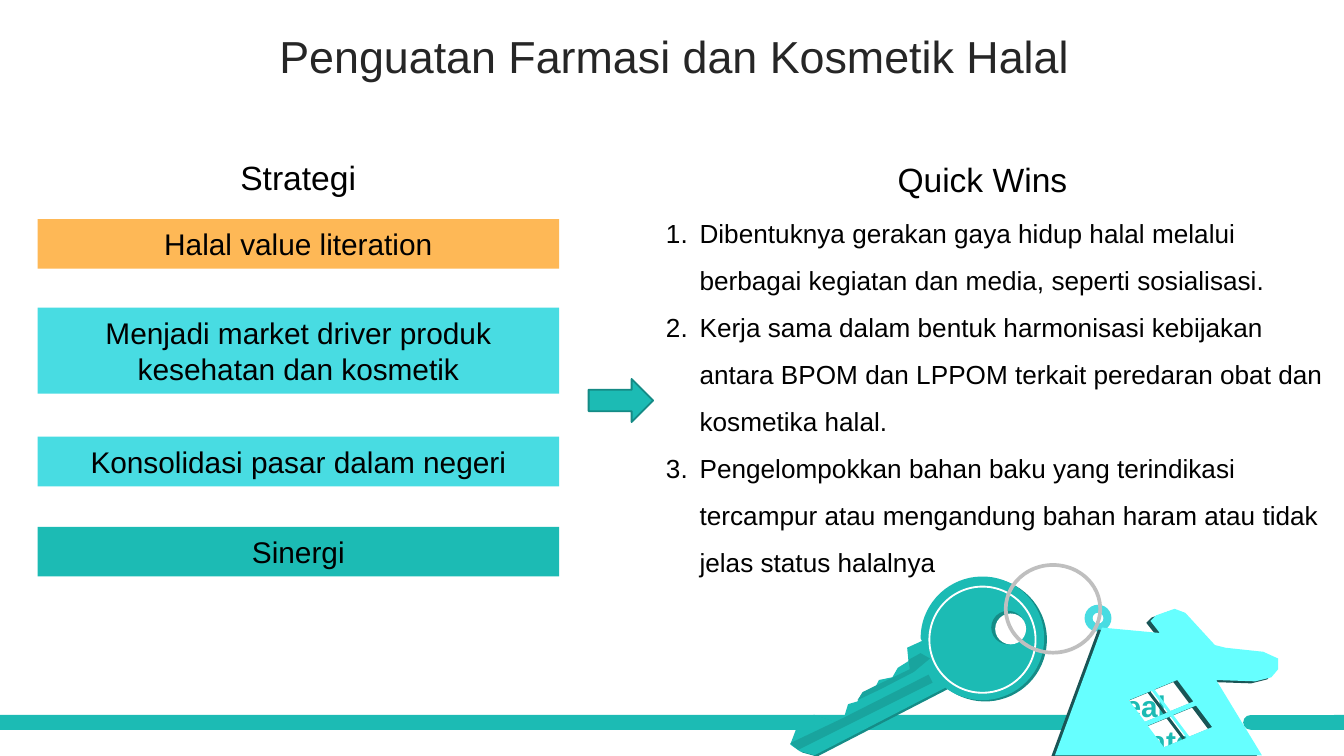
from math import cos, pi, sin

from lxml.etree import SubElement
from pptx import Presentation
from pptx.dml.color import RGBColor
from pptx.enum.shapes import MSO_SHAPE
from pptx.enum.text import MSO_ANCHOR, MSO_AUTO_SIZE, PP_ALIGN
from pptx.oxml.ns import qn
from pptx.util import Inches, Pt

WIDTH = Inches(10)
HEIGHT = WIDTH * 9 // 16
CELL = WIDTH / 100
COLORS = {
    "teal": "1CBBB4", "aqua": "48DCE2", "orange": "FEB856", "dark": "158C87",
    "groove": "19A49E", "house": "66FFFF", "edge": "1A5556", "ring": "BFBFBF",
    "white": "FFFFFF", "black": "000000", "title": "262626", "outline": "158A85",
}
STRATEGIES = [
    ("Halal value literation", "orange", 16.3, 3.7),
    ("Menjadi market driver produk kesehatan dan kosmetik", "aqua", 22.9, 6.4),
    ("Konsolidasi pasar dalam negeri", "aqua", 32.5, 3.7),
    ("Sinergi", "teal", 39.2, 3.7),
]
QUICK_WINS = [
    "Dibentuknya gerakan gaya hidup halal melalui berbagai kegiatan dan media, seperti sosialisasi.",
    "Kerja sama dalam bentuk harmonisasi kebijakan antara BPOM dan LPPOM terkait peredaran obat dan kosmetika halal.",
    "Pengelompokkan bahan baku yang terindikasi tercampur atau mengandung bahan haram atau tidak jelas status halalnya",
]
KEY_BLADE = [
    (70.3, 51.2), (60.6, 56.2), (59.5, 55.9), (58.8, 55.4), (59.6, 53.3),
    (60.6, 53.2), (62.1, 53.7), (62.8, 53.4), (63.1, 52.4), (63.8, 52.2),
    (64.2, 51.5), (65.1, 51.2), (65.4, 50.6), (66.4, 50.4), (66.8, 49.7),
    (67.6, 49.2), (67.5, 48.2), (68.6, 47.7),
]
KEY_GROOVES = [
    [(58.8, 55.3), (62.8, 53.4), (69.1, 50.2), (69.4, 50.8), (59.4, 55.8)],
    [(63.8, 52.1), (64.2, 51.5), (65.2, 51), (67.7, 49.8), (67.6, 49.1),
     (68.5, 48.6), (69.2, 49), (68, 50), (65.5, 51.3)],
]
HOUSE = [
    (82, 46.7), (86.3, 47.1), (85.6, 46.2), (86, 45.8), (87.4, 45.3),
    (88.2, 45.6), (90.4, 48), (91.2, 48.2), (94, 48.5), (95.1, 49),
    (95.1, 49.8), (94.6, 50.4), (93.4, 50.7), (90.5, 50.6), (93.9, 56.2),
    (78.5, 56.2),
]


def box(left, top, width, height):
    return [round(v * CELL) for v in (left, top, width, height)]


def rgb(name):
    return RGBColor.from_string(COLORS[name])


def paint(sp, fill, line=None):
    sp.shadow.inherit = False
    sp.fill.solid()
    sp.fill.fore_color.rgb = rgb(fill)
    if line:
        sp.line.color.rgb = rgb(line)
        sp.line.width = Pt(1)
    else:
        sp.line.fill.background()
    return sp


def add_shape(s, kind, at, fill, line=None):
    return paint(s.shapes.add_shape(kind, *box(*at)), fill, line)


def add_outline(s, contours, fill, shift=0):
    scaled = [[(round((x + shift) * CELL), round((y + abs(shift) / 2) * CELL)) for x, y in c]
              for c in contours]
    builder = s.shapes.build_freeform(*scaled[0][0])
    builder.add_line_segments(scaled[0][1:])
    for contour in scaled[1:]:
        builder.move_to(*contour[0])
        builder.add_line_segments(contour[1:])
    return paint(builder.convert_to_shape(), fill)


def format_text(p, size, color="black", align=None, bold=False):
    p.alignment = align
    for r in p.runs:
        r.font.name = "Arial"
        r.font.size = Pt(size)
        r.font.bold = bold
        r.font.color.rgb = rgb(color)


def add_label(s, text, at, size, **style):
    tf = s.shapes.add_textbox(*box(*at)).text_frame
    tf.word_wrap = True
    tf.text = text
    format_text(tf.paragraphs[0], size, **style)
    return tf


def place(sp, at):
    sp.left, sp.top, sp.width, sp.height = box(*at)
    sp.text_frame.auto_size = MSO_AUTO_SIZE.NONE
    return sp.text_frame


def fill_title(s, text):
    tf = place(s.shapes.title, (2.7, 1.45, 94.9, 5.9))
    tf.text = text
    tf.vertical_anchor = MSO_ANCHOR.MIDDLE
    p = tf.paragraphs[0]
    p.line_spacing = 0.9
    format_text(p, 24, "title", PP_ALIGN.CENTER)


def fill_numbered_list(s, items):
    tf = place(s.placeholders[1], (48.55, 14.5, 51.4, 29.3))
    tf.text = "\n".join(items)
    for p in tf.paragraphs:
        p.line_spacing = 1.5
        p.space_before = Pt(0)
        format_text(p, 14, align=PP_ALIGN.LEFT)
        props = p._p.get_or_add_pPr()
        props.set("marL", str(Inches(0.25)))
        props.set("indent", str(-Inches(0.25)))
        SubElement(props, qn("a:buFont"), typeface="+mj-lt")
        SubElement(props, qn("a:buAutoNum"), type="arabicPeriod")


def add_strategies(s):
    for text, color, top, height in STRATEGIES:
        sp = add_shape(s, MSO_SHAPE.RECTANGLE, (2.8, top, 38.8, height), color)
        tf = sp.text_frame
        tf.word_wrap = True
        tf.vertical_anchor = MSO_ANCHOR.MIDDLE
        tf.text = text
        format_text(tf.paragraphs[0], 16, align=PP_ALIGN.CENTER)


def add_footer(s):
    for center, length, rotation in ((40.55, 81.1, 90), (96.25, 7.5, 270)):
        at = (center - 0.55, 53.75 - length / 2, 1.1, length)
        sp = add_shape(s, MSO_SHAPE.ROUND_2_SAME_RECTANGLE, at, "teal")
        sp.adjustments[0] = 0.5
        sp.rotation = rotation
    tf = add_label(s, "Real Estate", (81.1, 50.6, 11.4, 6.4), 16,
                   color="teal", align=PP_ALIGN.JUSTIFY, bold=True)
    tf.vertical_anchor = MSO_ANCHOR.MIDDLE


def add_disc(s, x, y, radius, fill):
    return add_shape(s, MSO_SHAPE.OVAL, (x - radius, y - radius, 2 * radius, 2 * radius), fill)


def add_key(s):
    arc = [(73.1 + 4.6 * cos(a), 47.5 + 4.6 * sin(a))
           for a in (pi * (1.0 + 1.74 * i / 60) for i in range(61))]
    for color, shift in (("dark", 0.2), ("teal", 0)):
        add_outline(s, [KEY_BLADE + arc], color, shift)
    for groove in KEY_GROOVES:
        add_outline(s, [groove], "groove")
    rim = add_disc(s, 73.1, 47.6, 3.95, "teal")
    rim.line.color.rgb = rgb("white")
    rim.line.width = Pt(1)
    add_disc(s, 75, 46.7, 1.25, "dark")
    add_disc(s, 75.2, 46.8, 1.15, "white")


def add_house(s):
    panes = []
    for row in range(2):
        for col in range(2):
            x, y = 84 + 1.9 * col + 1.4 * row, 52.1 - 0.8 * col + 1.9 * row
            panes.append([(x, y), (x + 1.7, y - 0.7), (x + 2.9, y + 0.9), (x + 1.2, y + 1.6)])
    add_disc(s, 81.7, 46, 1, "aqua")
    add_disc(s, 81.7, 46, 0.4, "white")
    ring = add_shape(s, MSO_SHAPE.DONUT, (74.7, 41.9, 7.3, 6.8), "ring")
    ring.adjustments[0] = 0.04
    for color, shift in (("edge", -0.3), ("house", 0)):
        add_outline(s, [HOUSE] + panes, color, shift)


def main():
    prs = Presentation()
    prs.slide_width, prs.slide_height = WIDTH, HEIGHT
    s = prs.slides.add_slide(prs.slide_layouts[1])
    add_footer(s)
    fill_title(s, "Penguatan Farmasi dan Kosmetik Halal")
    add_label(s, "Strategi", (16.9, 11.2, 23.4, 4), 18)
    add_label(s, "Quick Wins", (61.4, 11.35, 23.4, 4), 18, align=PP_ALIGN.CENTER)
    add_strategies(s)
    add_shape(s, MSO_SHAPE.RIGHT_ARROW, (43.8, 28.2, 4.8, 3.2), "teal", "outline")
    fill_numbered_list(s, QUICK_WINS)
    add_key(s)
    add_house(s)
    prs.save("out.pptx")


if __name__ == "__main__":
    main()
